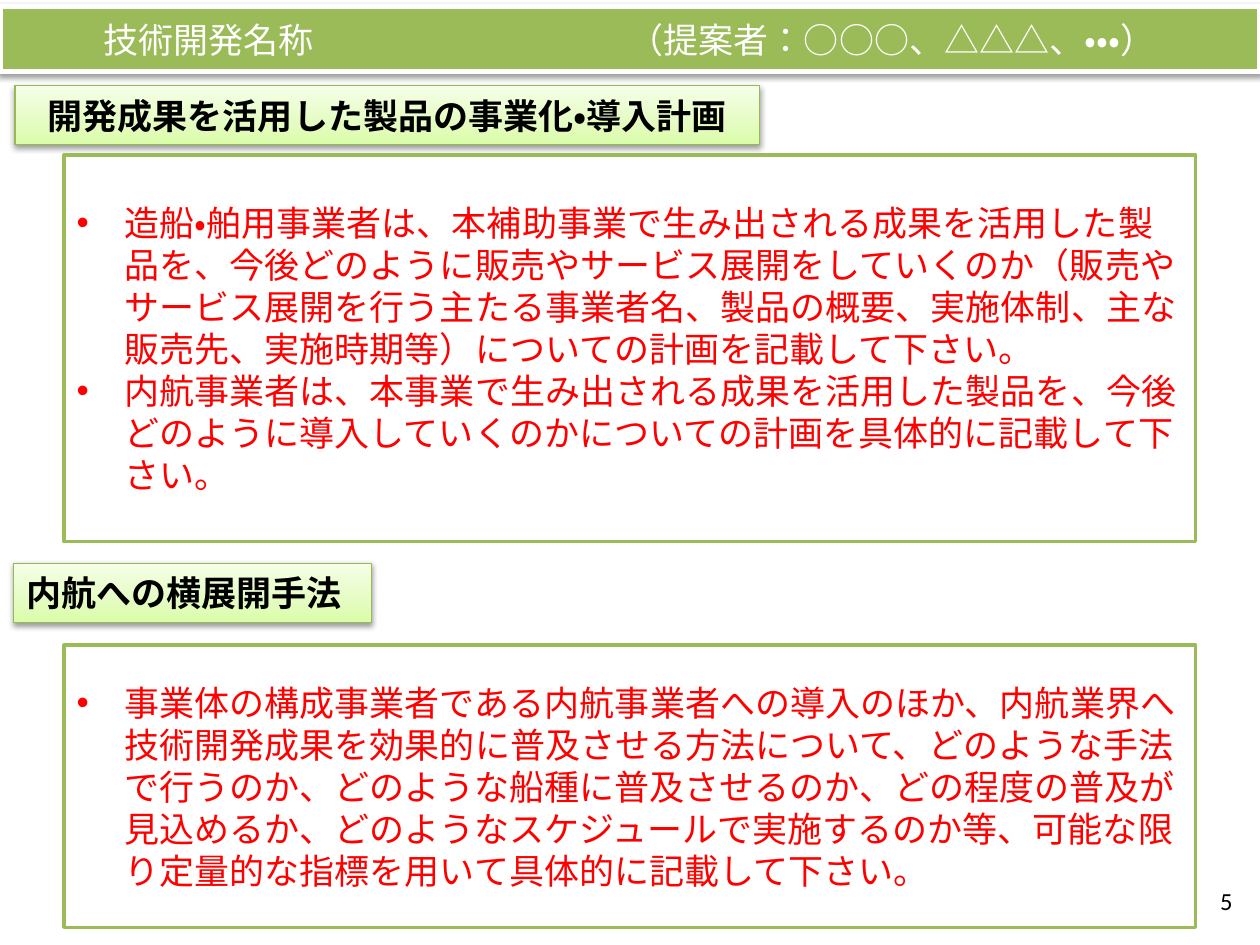
import copy

import pptx
import pptx.dml.color
import pptx.enum.lang
import pptx.enum.shapes
import pptx.enum.text
import pptx.oxml
import pptx.oxml.ns
import pptx.util

COLORS = {"green": "9BBB59", "edge": "98B955", "white": "FFFFFF", "black": "000000", "red": "FF0000",
          "low": "DAFDA7", "mid": "E4FCC2", "high": "F5FFE7"}
ALIGN = pptx.enum.text.PP_ALIGN
COLS, ROWS = 100, 75
PLANS = [
    "造船・舶用事業者は、本補助事業で生み出される成果を活用した製品を、今後どのように販売やサービス展開をしていくのか"
    "（販売やサービス展開を行う主たる事業者名、製品の概要、実施体制、主な販売先、実施時期等）についての計画を記載して下さい。",
    "内航事業者は、本事業で生み出される成果を活用した製品を、今後どのように導入していくのかについての計画を具体的に記載して下さい。",
]
ROLLOUT = [
    "事業体の構成事業者である内航事業者への導入のほか、内航業界へ技術開発成果を効果的に普及させる方法について、"
    "どのような手法で行うのか、どのような船種に普及させるのか、どの程度の普及が見込めるか、"
    "どのようなスケジュールで実施するのか等、可能な限り定量的な指標を用いて具体的に記載して下さい。",
]


def rgb(name):
    """Return the named colour."""
    return pptx.dml.color.RGBColor.from_string(COLORS[name])


def element(xml):
    """Return a DrawingML element from a short fragment."""
    tag, rest = xml.split(" ", 1)
    return pptx.oxml.parse_xml(f"<a:{tag} {pptx.oxml.ns.nsdecls('a')} {rest}")


class Deck:
    """Hold the style and the current slide, and draw each kind of element."""

    def __init__(self):
        """Open a blank slide of 10 by 7.5 inches."""
        self.prs = pptx.Presentation()
        self.prs.slide_width = pptx.util.Inches(10)
        self.prs.slide_height = pptx.util.Inches(7.5)
        self.s = self.prs.slides.add_slide(self.prs.slide_layouts[6])
        self.font = {"name": "Calibri", "size": pptx.util.Pt(20), "bold": False,
                     "language_id": pptx.enum.lang.MSO_LANGUAGE_ID.JAPANESE}

    def place(self, col, row, cols, rows):
        """Turn grid columns and rows into a position and size."""
        w, h = self.prs.slide_width / COLS, self.prs.slide_height / ROWS
        return [round(v) for v in (col * w, row * h, cols * w, rows * h)]

    def text(self, sp, texts, color, align=ALIGN.LEFT, **style):
        """Fill a shape with paragraphs of one style."""
        tf = sp.text_frame
        tf.word_wrap = True
        tf.vertical_anchor = pptx.enum.text.MSO_ANCHOR.MIDDLE
        for i, text in enumerate(texts):
            p = tf.paragraphs[0] if i == 0 else tf.add_paragraph()
            p.alignment = align
            r = p.add_run()
            r.text = text
            for key, value in {**self.font, **style}.items():
                setattr(r.font, key, value)
            r.font.color.rgb = rgb(color)

    def rect(self, box, line, width, fill="white"):
        """Draw a filled and outlined rectangle."""
        sp = self.s.shapes.add_shape(pptx.enum.shapes.MSO_SHAPE.RECTANGLE, *self.place(*box))
        sp.shadow.inherit = False
        sp.fill.solid()
        sp.fill.fore_color.rgb = rgb(fill)
        sp.line.color.rgb = rgb(line)
        sp.line.width = pptx.util.Pt(width)
        return sp

    def shade(self, sp):
        """Drop a soft shadow straight down."""
        sp._element.spPr.find(pptx.oxml.ns.qn("a:effectLst")).append(element(
            'outerShdw blurRad="40000" dist="20000" dir="5400000" rotWithShape="0">'
            '<a:srgbClr val="000000"><a:alpha val="38000"/></a:srgbClr></a:outerShdw>'))

    def banner(self, box, name, proposer):
        """Draw the title band with the proposer at a tab stop."""
        sp = self.rect(box, "white", 3, "green")
        self.shade(sp)
        self.text(sp, [f"{name}\t{proposer}"], "white")
        tf = sp.text_frame
        tf.margin_left = pptx.util.Inches(0.82)
        tab = pptx.util.Inches(4.17)
        tf.paragraphs[0]._p.get_or_add_pPr().append(
            element(f'tabLst ><a:tab pos="{tab}" algn="l"/></a:tabLst>'))

    def heading(self, box, text, align):
        """Draw a shaded section label with a three-stop gradient."""
        sp = self.rect(box, "edge", 0.75)
        self.shade(sp)
        sp.fill.gradient()
        sp.fill.gradient_angle = 90
        stops = sp._element.spPr.find(".//" + pptx.oxml.ns.qn("a:gsLst"))
        stops.insert(1, copy.deepcopy(stops[0]))
        for stop, (color, share) in zip(sp.fill.gradient_stops, (("low", 0), ("mid", 0.35), ("high", 1))):
            stop.color.rgb = rgb(color)
            stop.position = share
        self.text(sp, [text], "black", align, bold=True)

    def panel(self, box, texts):
        """Draw an outlined panel of bulleted paragraphs."""
        sp = self.rect(box, "green", 2)
        self.text(sp, texts, "red")
        indent = pptx.util.Inches(0.38)
        for p in sp.text_frame.paragraphs:
            pPr = p._p.get_or_add_pPr()
            pPr.set("marL", str(indent))
            pPr.set("indent", str(-indent))
            pPr.append(element('buFont typeface="Arial"/>'))
            pPr.append(element('buChar char="•"/>'))

    def page_number(self, box, text):
        """Put the page number at the right."""
        sp = self.s.shapes.add_textbox(*self.place(*box))
        self.text(sp, [text], "black", ALIGN.RIGHT, size=pptx.util.Pt(14))


def main():
    """Build the slide and save it."""
    deck = Deck()
    deck.banner((0, 0.5, 100, 5.2), "技術開発名称", "（提案者：○○○、△△△、・・・）")
    deck.heading((1.2, 6.8, 59.1, 4.7), "開発成果を活用した製品の事業化・導入計画", ALIGN.CENTER)
    deck.panel((5.1, 12.3, 89.8, 30.7), PLANS)
    deck.heading((1.1, 44.7, 28.4, 4.7), "内航への横展開手法", ALIGN.LEFT)
    deck.panel((5.1, 51.2, 89.8, 22.4), ROLLOUT)
    deck.page_number((75.5, 69.5, 23.3, 4), "5")
    deck.prs.save("out.pptx")


if __name__ == "__main__":
    main()
